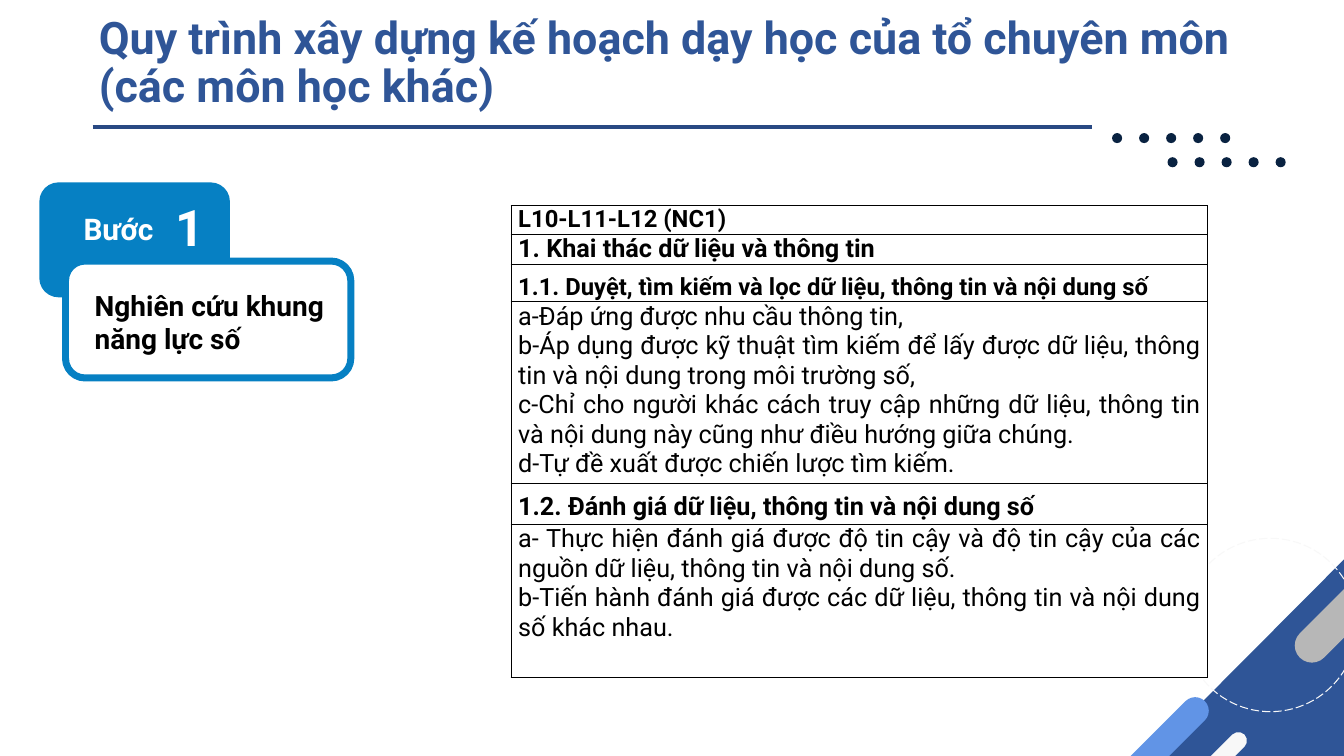
"""Build the slide on the first step of planning a subject group's teaching."""
from lxml import etree
from pptx import Presentation
from pptx import util as u
from pptx.dml.color import RGBColor
from pptx.enum import dml, shapes, text
from pptx.oxml import ns

Inches = u.Inches
NAVY, BLUE, DOT, WHITE, BLACK = "2F5597", "0680C3", "092241", "FFFFFF", "000000"
KIND = shapes.MSO_SHAPE
ALIGN = text.PP_ALIGN


def paint(target, color):
    """Give a fill or a font colour its hex value."""
    if hasattr(target, "solid"):
        target.solid()
        target = target.fore_color
    target.rgb = RGBColor.from_string(color)


def write(frame, lines, size, color, bold=True, align=ALIGN.LEFT, spacing=1.0, **frame_format):
    """Fill a text frame with one paragraph per line."""
    for name, value in frame_format.items():
        setattr(frame, name, value)
    for index, line in enumerate(lines):
        para = frame.paragraphs[0] if index == 0 else frame.add_paragraph()
        para.alignment = align
        para.line_spacing = spacing
        span = para.add_run()
        span.text = line
        for name, value in {"name": "Roboto", "size": u.Pt(size), "bold": bold}.items():
            setattr(span.font, name, value)
        paint(span.font.color, color)


deck = Presentation()
deck.slide_width, deck.slide_height = Inches(13.33), Inches(7.5)
page = deck.slides.add_slide(deck.slide_layouts[5])

dots = [(left + 0.268 * step, top, 0.1, 0.1)
        for left, top in ((11.58, 1.56), (11.03, 1.32)) for step in range(5)]
decor = [
    (KIND.RIGHT_TRIANGLE, (11.32, 5.53, 2.04, 2.03), 270, NAVY, None),
    (KIND.ROUNDED_RECTANGLE, (12.67, 5.82, 1.51, 0.34), 135, "B7B7B7", None),
    (KIND.OVAL, (11.74, 5.34, 1.72, 1.72), 180, None, ("F8F8F8", 0.75)),
    (KIND.ROUNDED_RECTANGLE, (10.72, 7.33, 1.44, 0.27), 135, "6194E6", None),
    (KIND.ROUNDED_RECTANGLE, (11.48, 7.56, 1.01, 0.17), 135, "F8F8F8", None),
    *[(KIND.OVAL, place, 0, DOT, None) for place in dots],
    (KIND.ROUNDED_RECTANGLE, (0.39, 1.81, 1.89, 1.14), 0, BLUE, None),
    (KIND.ROUNDED_RECTANGLE, (0.65, 2.59, 2.83, 1.16), 0, WHITE, (BLUE, 5)),
]
for kind, place, turn, fill, line in decor:
    shape = page.shapes.add_shape(kind, *map(Inches, place))
    shape.shadow.inherit = False
    shape.rotation = turn
    if kind == KIND.ROUNDED_RECTANGLE and turn:
        shape.adjustments[0] = 0.5
    if fill:
        paint(shape.fill, fill)
    else:
        shape.fill.background()
        shape.line.dash_style = dml.MSO_LINE.LONG_DASH
    if line:
        paint(shape.line.fill, line[0])
        shape.line.width = u.Pt(line[1])
    else:
        shape.line.fill.background()

rule = page.shapes.add_connector(
    shapes.MSO_CONNECTOR.STRAIGHT, Inches(0.92), Inches(1.26), Inches(10.83), Inches(1.26))
paint(rule.line.fill, "294983")
rule.line.width = u.Pt(2.25)
etree.SubElement(rule._element.spPr, ns.qn("a:effectLst"))

title = page.shapes.title
title_place = {"left": 0.88, "top": -0.09, "width": 11.84, "height": 1.45}
for name, value in title_place.items():
    setattr(title, name, Inches(value))
write(title.text_frame,
      ["Quy trình xây dựng kế hoạch dạy học của tổ chuyên môn (các môn học khác)"],
      32, NAVY, spacing=0.9, word_wrap=True, auto_size=text.MSO_AUTO_SIZE.NONE,
      vertical_anchor=text.MSO_ANCHOR.MIDDLE)

narrow = {"margin_left": Inches(0.07), "margin_right": Inches(0.07),
          "margin_top": Inches(0.03), "margin_bottom": Inches(0.03)}
labels = [
    ((0.63, 2.04, 1.09, 0.46), "Bước", 21.3, WHITE, ALIGN.CENTER, {"word_wrap": True}),
    ((0.84, 2.81, 2.64, 0.77), "Nghiên cứu khung năng lực số", 20, BLACK, ALIGN.LEFT,
     {"word_wrap": True}),
    ((1.67, 1.92, 0.42, 0.67), "1", 36, WHITE, ALIGN.CENTER, {"word_wrap": False, **narrow}),
]
for place, label, size, color, align, frame_format in labels:
    box = page.shapes.add_textbox(*map(Inches, place))
    write(box.text_frame, [label], size, color, align=align, **frame_format)

rows = [
    (0.26, 17, True, 1.0, ["L10-L11-L12 (NC1)"]),
    (0.28, 18, True, 1.0, ["1. Khai thác dữ liệu và thông tin"]),
    (0.32, 17, True, 1.3, ["1.1. Duyệt, tìm kiếm và lọc dữ liệu, thông tin và nội dung số"]),
    (1.68, 18, False, 1.0, [
        "a-Đáp ứng được nhu cầu thông tin,",
        "b-Áp dụng được kỹ thuật tìm kiếm để lấy được dữ liệu, thông tin và nội dung "
        "trong môi trường số,",
        "c-Chỉ cho người khác cách truy cập những dữ liệu, thông tin và nội dung này "
        "cũng như điều hướng giữa chúng.",
        "d-Tự đề xuất được chiến lược tìm kiếm."]),
    (0.41, 18, True, 1.3, ["1.2. Đánh giá dữ liệu, thông tin và nội dung số"]),
    (1.52, 18, False, 1.0, [
        "a- Thực hiện đánh giá được độ tin cậy và độ tin cậy của các nguồn dữ liệu, "
        "thông tin và nội dung số.",
        "b-Tiến hành đánh giá được các dữ liệu, thông tin và nội dung số khác nhau."]),
]
table = page.shapes.add_table(
    len(rows), 1, Inches(5.07), Inches(2.04), Inches(6.91),
    Inches(sum(row[0] for row in rows))).table
table.first_row = table.horz_banding = False
cell_margins = {"margin_left": Inches(0.07), "margin_right": Inches(0.07),
                "margin_top": 0, "margin_bottom": 0}
for index, (height, size, bold, spacing, lines) in enumerate(rows):
    table.rows[index].height = Inches(height)
    cell = table.cell(index, 0)
    for name, value in cell_margins.items():
        setattr(cell, name, value)
    properties = cell._tc.get_or_add_tcPr()
    for side in ("lnL", "lnR", "lnT", "lnB"):
        border = etree.SubElement(properties, ns.qn(f"a:{side}"), w=str(u.Pt(1)))
        solid = etree.SubElement(border, ns.qn("a:solidFill"))
        etree.SubElement(solid, ns.qn("a:srgbClr"), val=BLACK)
    paint(cell.fill, WHITE)
    write(cell.text_frame, lines, size, BLACK, bold, ALIGN.JUSTIFY, spacing)

deck.save("out.pptx")
